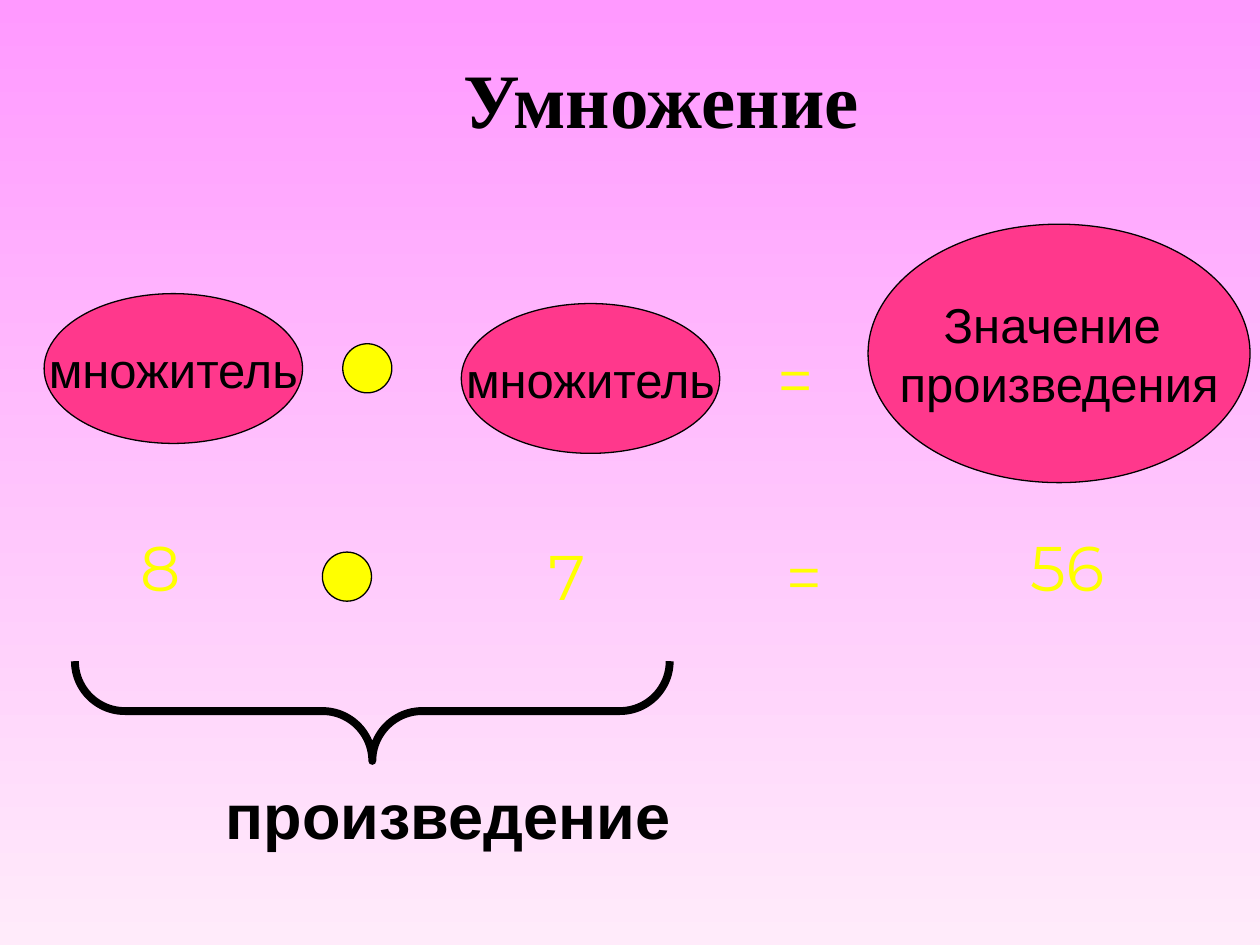
from lxml.etree import SubElement
from pptx import Presentation
from pptx.dml.color import RGBColor
from pptx.enum.shapes import MSO_SHAPE
from pptx.enum.text import MSO_ANCHOR, PP_ALIGN
from pptx.oxml.ns import qn
from pptx.util import Cm, Pt

BLACK = RGBColor(0x00, 0x00, 0x00)
YELLOW = RGBColor(0xFF, 0xFF, 0x00)
ROSE = RGBColor(0xFF, 0x38, 0x8C)
BG_TOP = RGBColor(0xFF, 0x99, 0xFF)
BG_BOTTOM = RGBColor(0xFF, 0xEB, 0xFA)

FACTOR = (5.21, 3.02)
SIGN = (2.24, 2.08)
DOT = (0.99, 0.99)


def write(sp, lines, size, font, color, bold=False, align=PP_ALIGN.CENTER,
          anchor=MSO_ANCHOR.TOP, wrap=False):
    tf = sp.text_frame
    tf.word_wrap = wrap
    tf.vertical_anchor = anchor
    for i, line in enumerate(lines):
        p = tf.add_paragraph() if i else tf.paragraphs[0]
        p.alignment = align
        r = p.add_run()
        r.text = line
        r.font.size, r.font.name, r.font.bold = Pt(size), font, bold
        r.font.color.rgb = color


def add_text(s, x, y, w, h, text, size, font, color, **style):
    sp = s.shapes.add_textbox(Cm(x), Cm(y), Cm(w), Cm(h))
    write(sp, [text], size, font, color, **style)
    return sp


def add_shape(s, kind, x, y, w, h, fill=None, width=0.75):
    sp = s.shapes.add_shape(kind, Cm(x), Cm(y), Cm(w), Cm(h))
    sp.shadow.inherit = False
    if fill is None:
        sp.fill.background()
    else:
        sp.fill.solid()
        sp.fill.fore_color.rgb = fill
    sp.line.color.rgb = BLACK
    sp.line.width = Pt(width)
    return sp


def add_term(s, x, y, w, h, lines):
    sp = add_shape(s, MSO_SHAPE.OVAL, x, y, w, h, ROSE)
    write(sp, lines, 28, "Arial", BLACK, anchor=MSO_ANCHOR.MIDDLE)


def add_sign(s, x, y, w, h, text):
    """Yellow character with a thin black outline."""
    sp = add_text(s, x, y, w, h, text, 36, "Montserrat", YELLOW)
    rpr = sp.text_frame.paragraphs[0].runs[0].font._element
    ln = rpr.makeelement(qn("a:ln"), {"w": str(Pt(0.75))})
    fill = SubElement(ln, qn("a:solidFill"))
    SubElement(fill, qn("a:srgbClr"), val=str(BLACK))
    rpr.insert(0, ln)


def add_background(s):
    fill = s.background.fill
    fill.gradient()
    fill.gradient_angle = 270
    for stop, color in zip(fill.gradient_stops, (BG_TOP, BG_BOTTOM)):
        stop.color.rgb = color
    fill.gradient_stops[0].position = 0
    fill.gradient_stops[1].position = 1


def add_names_row(s, x, y):
    """Names of the parts: factor, factor, product value."""
    for dx, dy in ((0, 1.4), (8.41, 1.6)):
        add_term(s, x + dx, y + dy, *FACTOR, ["множитель"])
    add_term(s, x + 16.61, y, 7.7, 5.21, ["Значение ", "произведения"])
    add_sign(s, x + 14.02, y + 2.21, *SIGN, "=")
    add_shape(s, MSO_SHAPE.OVAL, x + 6.02, y + 2.41, *DOT, YELLOW)


def add_numbers_row(s, x, y):
    """The worked example under the names."""
    for dx, dy, text in ((0, 0, "8"), (8.2, 0.2, "7"), (12.98, 0.2, "=")):
        add_sign(s, x + dx, y + dy, *SIGN, text)
    add_sign(s, x + 17.6, y, 3.61, 2.59, "56")
    add_shape(s, MSO_SHAPE.OVAL, x + 4.39, y + 0.61, *DOT, YELLOW)


def add_brace(s, x, y, w, h):
    """Brace pointing down, with its caption below."""
    # A right brace turned by 90 degrees about the centre of the box
    sp = add_shape(s, MSO_SHAPE.RIGHT_BRACE, x + (w - h) / 2, y + (h - w) / 2,
                   h, w, width=4.5)
    sp.rotation = 90
    sp.adjustments[0] = 0.5
    sp.adjustments[1] = 0.5
    add_text(s, x + 2.79, y + 2.19, 10.21, 1.78, "произведение", 36, "Arial",
             BLACK, bold=True, align=PP_ALIGN.LEFT, wrap=True)


def main():
    prs = Presentation()
    prs.slide_width, prs.slide_height = Cm(25.4), Cm(19.05)
    s = prs.slides.add_slide(prs.slide_layouts[6])
    add_background(s)
    add_text(s, 9.09, 0.91, 8.66, 2.11, "Умножение", 44, "Times New Roman",
             BLACK, bold=True, align=PP_ALIGN.LEFT)
    add_names_row(s, 0.89, 4.52)
    add_numbers_row(s, 2.11, 10.52)
    add_brace(s, 1.51, 13.33, 11.99, 2.01)
    prs.save("out.pptx")


if __name__ == "__main__":
    main()
